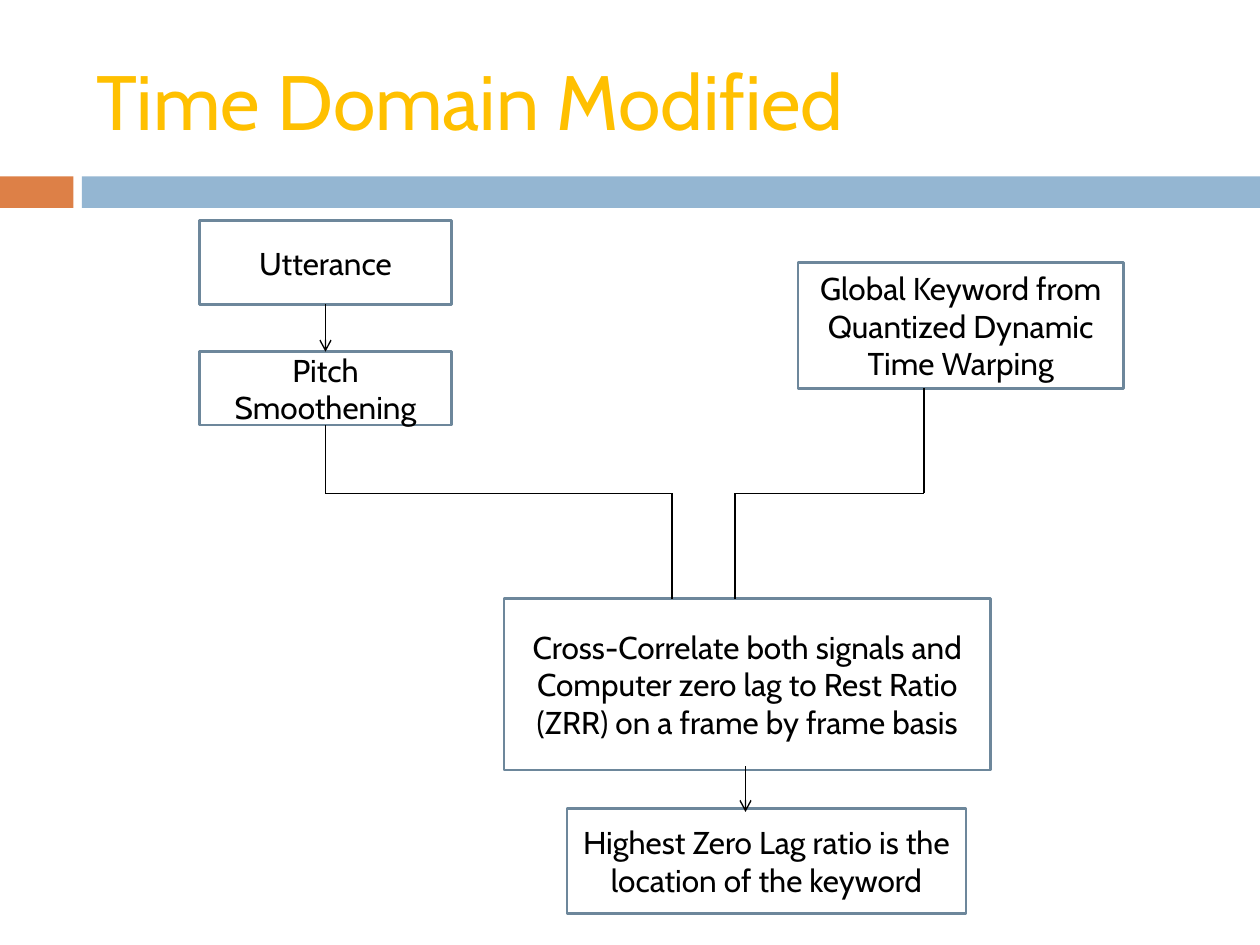
"""Build the flow chart slide for time domain keyword spotting."""
from dataclasses import dataclass
from itertools import pairwise

from lxml import etree
from pptx import Presentation
from pptx.dml.color import RGBColor
from pptx.enum import shapes, text
from pptx.oxml import ns
from pptx.util import Pt


@dataclass(frozen=True)
class Theme:
    font: str = "Cabin"
    title_size: float = 44
    box_size: float = 18
    box_line: float = 1.5
    flow_line: float = 0.79
    title: str = "FFC000"
    ink: str = "000000"
    paper: str = "FFFFFF"
    border: str = "6D879B"
    accent: str = "DD8047"
    band: str = "94B6D2"


@dataclass(frozen=True)
class Box:
    left: float
    top: float
    width: float
    height: float
    label: str = ""

    @property
    def bounds(self) -> list:
        return [Pt(value) for value in (self.left, self.top, self.width, self.height)]

    @property
    def center(self) -> float:
        return self.left + self.width / 2

    @property
    def bottom(self) -> float:
        return self.top + self.height


@dataclass(frozen=True)
class Flow:
    points: tuple
    arrow: bool = False


THEME = Theme()


def color(value: str) -> RGBColor:
    return RGBColor.from_string(value)


def apply(target, formats: dict) -> None:
    for name, value in formats.items():
        setattr(target, name, value)


def write(shape, words: str, size: float, ink: str, align) -> None:
    frame = shape.text_frame
    frame.text = words
    apply(frame, {"word_wrap": True, "auto_size": text.MSO_AUTO_SIZE.NONE,
                  "vertical_anchor": text.MSO_ANCHOR.MIDDLE})
    paragraph = frame.paragraphs[0]
    paragraph.alignment = align
    font = paragraph.runs[0].font
    apply(font, {"name": THEME.font, "size": Pt(size)})
    font.color.rgb = color(ink)


def add_rectangle(slide, box: Box, fill: str):
    shape = slide.shapes.add_shape(shapes.MSO_SHAPE.RECTANGLE, *box.bounds)
    shape.shadow.inherit = False
    shape.fill.solid()
    shape.fill.fore_color.rgb = color(fill)
    shape.line.fill.background()
    return shape


def add_step(slide, box: Box) -> None:
    shape = add_rectangle(slide, box, THEME.paper)
    shape.line.color.rgb = color(THEME.border)
    shape.line.width = Pt(THEME.box_line)
    write(shape, box.label, THEME.box_size, THEME.ink, text.PP_ALIGN.CENTER)


def add_flow(slide, flow: Flow) -> None:
    for start, end in pairwise(flow.points):
        connector = slide.shapes.add_connector(
            shapes.MSO_CONNECTOR.STRAIGHT, *[Pt(value) for value in start + end])
        connector.line.color.rgb = color(THEME.ink)
        connector.line.width = Pt(THEME.flow_line)
        if flow.arrow:
            line = connector.line.fill._xPr
            etree.SubElement(line, ns.qn("a:tailEnd"), type="arrow")
        etree.SubElement(connector._element.spPr, ns.qn("a:effectLst"))


def add_title(slide, box: Box) -> None:
    title = slide.shapes.title
    apply(title, dict(zip(("left", "top", "width", "height"), box.bounds)))
    write(title, box.label, THEME.title_size, THEME.title, text.PP_ALIGN.LEFT)


def main() -> None:
    presentation = Presentation()
    apply(presentation, {"slide_width": Pt(720), "slide_height": Pt(540)})
    slide = presentation.slides.add_slide(presentation.slide_layouts[5])

    add_rectangle(slide, Box(0, 100.8, 42, 18), THEME.accent)
    add_rectangle(slide, Box(46.8, 100.8, 673.2, 18), THEME.band)
    add_title(slide, Box(48, 18, 642, 78, "Time Domain Modified"))

    utterance = Box(114, 126, 144, 48, "Utterance")
    keyword = Box(456, 150, 186, 72, "Global Keyword from Quantized Dynamic Time Warping")
    pitch = Box(114, 201, 144, 42, "Pitch Smoothening")
    correlate = Box(288, 342, 278, 98, "Cross-Correlate both signals and Computer zero lag "
                    "to Rest Ratio (ZRR) on a frame by frame basis")
    result = Box(324, 462, 228, 60, "Highest Zero Lag ratio is the location of the keyword")
    for box in (utterance, keyword, pitch, correlate, result):
        add_step(slide, box)

    bend, pitch_entry, keyword_entry, keyword_exit, result_entry = 282, 384, 420, 528, 426
    flows = (
        Flow(((utterance.center, utterance.bottom), (pitch.center, pitch.top)), arrow=True),
        Flow(((result_entry, correlate.bottom - 2), (result_entry, result.top + 2)), arrow=True),
        Flow(((pitch.center, pitch.bottom), (pitch.center, bend),
              (pitch_entry, bend), (pitch_entry, correlate.top))),
        Flow(((keyword_entry, correlate.top), (keyword_entry, bend),
              (keyword_exit, bend), (keyword_exit, keyword.bottom))),
    )
    for flow in flows:
        add_flow(slide, flow)

    presentation.save("out.pptx")


if __name__ == "__main__":
    main()
